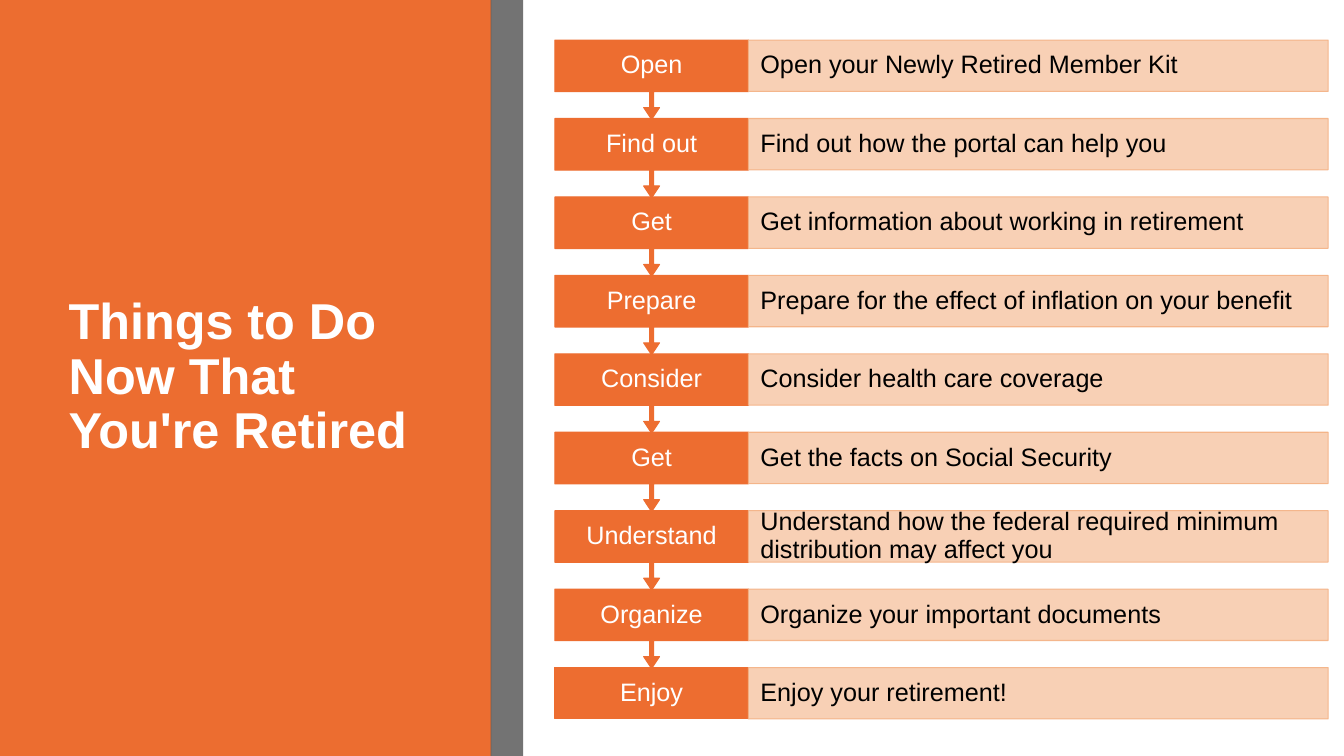
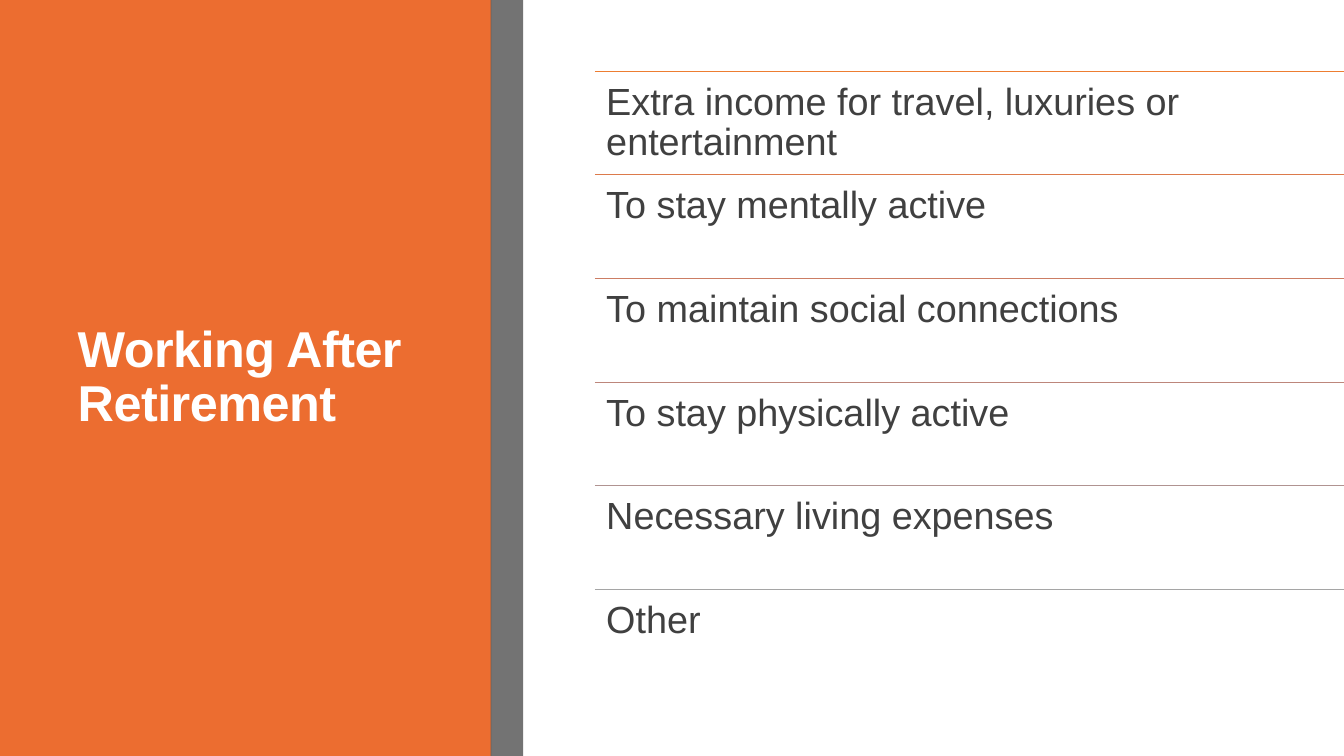
from pptx import Presentation
from pptx import util as u
from pptx.dml import color
from pptx.enum import shapes, text
from pptx.oxml import ns
from lxml import etree

W, H = 17.78, 10
FONT = "Arial"
WHITE, BLACK, BODY = "FFFFFF", "000000", "404040"
PANEL, STRIPE = "E94D03", "595959"
STEP, BAR, BAR_EDGE = "ED6D30", "F8CBAD", "F4B183"
PANEL_W, STRIPE_W = 6.5, 0.43

STEP_X, STEP_W, STEP_H = 7.34, 2.56, 0.68
STEP_TOP, STEP_PITCH, CALLOUT_H = 0.53, 1.0375, 1.05
BAR_X, BAR_W = STEP_X + STEP_W, 7.67
STEPS = [
    ("Open", "Open your Newly Retired Member Kit"),
    ("Find out", "Find out how the portal can help you"),
    ("Get", "Get information about working in retirement"),
    ("Prepare", "Prepare for the effect of inflation on your benefit"),
    ("Consider", "Consider health care coverage"),
    ("Get", "Get the facts on Social Security"),
    ("Understand", "Understand how the federal required minimum distribution may affect you"),
    ("Organize", "Organize your important documents"),
    ("Enjoy", "Enjoy your retirement!"),
]

REASON_X, REASON_TOP, REASON_H = 7.87, 0.94, 1.372
REASONS = [
    ("Extra income for travel, luxuries or entertainment", "ED7D31"),
    ("To stay mentally active", "DC7A4B"),
    ("To maintain social connections", "CC7D64"),
    ("To stay physically active", "BD867B"),
    ("Necessary living expenses", "B09391"),
    ("Other", "A5A5A5"),
]


def paint(fmt, hex_color, alpha=100):
    fmt.solid()
    fmt.fore_color.rgb = color.RGBColor.from_string(hex_color)
    if alpha < 100:
        clr = fmt._xPr.find(".//" + ns.qn("a:srgbClr"))
        etree.SubElement(clr, ns.qn("a:alpha")).set("val", str(alpha * 1000))


def inches(*lengths):
    return [u.Inches(n) for n in lengths]


def add_box(slide, kind, x, y, w, h, fill, edge=None, alpha=100):
    sp = slide.shapes.add_shape(kind, *inches(x, y, w, h))
    sp.shadow.inherit = False
    paint(sp.fill, fill, alpha)
    if edge:
        sp.line.width = u.Pt(1)
        paint(sp.line.fill, edge, alpha)
    else:
        sp.line.fill.background()
    return sp


def write(sp, words, size, hex_color, bold=False, align=text.PP_ALIGN.LEFT,
          anchor=text.MSO_ANCHOR.MIDDLE, inset=(0.1, 0.05), spacing=0):
    tf = sp.text_frame
    tf.word_wrap = True
    tf.vertical_anchor = anchor
    tf.margin_left = tf.margin_right = u.Inches(inset[0])
    tf.margin_top = tf.margin_bottom = u.Inches(inset[1])
    p = tf.paragraphs[0]
    p.alignment = align
    p.line_spacing = 0.9
    r = p.add_run()
    r.text = words
    r.font.name, r.font.size, r.font.bold = FONT, u.Pt(size), bold
    paint(r.font.fill, hex_color)
    if spacing:
        r._r.get_or_add_rPr().set("spc", str(int(spacing * 100)))


def add_text(slide, x, y, w, h, words, size, hex_color, **fmt):
    sp = slide.shapes.add_textbox(*inches(x, y, w, h))
    write(sp, words, size, hex_color, **fmt)


def add_rule(slide, x, y, hex_color):
    line = slide.shapes.add_connector(shapes.MSO_CONNECTOR.STRAIGHT, *inches(x, y, W, y))
    line.line.width = u.Pt(1)
    paint(line.line.fill, hex_color)
    etree.SubElement(line._element.spPr, ns.qn("a:effectLst"))


def add_titled_slide(prs, title, x, w, spacing=0):
    slide = prs.slides.add_slide(prs.slide_layouts[6])
    rect = shapes.MSO_SHAPE.RECTANGLE
    add_box(slide, rect, 0, 0, PANEL_W, H, PANEL, alpha=82)
    add_box(slide, rect, PANEL_W - 0.01, 0, STRIPE_W, H, STRIPE, alpha=84)
    add_text(slide, x, 0.79, w, H - 2 * 0.79, title, 48, WHITE, bold=True, spacing=spacing)
    return slide


def add_step(slide, row, verb, detail):
    y = STEP_TOP + row * STEP_PITCH
    if row == len(STEPS) - 1:
        add_box(slide, shapes.MSO_SHAPE.RECTANGLE, STEP_X, y, STEP_W, STEP_H, STEP, STEP)
    else:
        sp = add_box(slide, shapes.MSO_SHAPE.UP_ARROW_CALLOUT,
                     STEP_X, y, STEP_W, CALLOUT_H, STEP, STEP)
        sp.rotation = 180
        for i, share in enumerate((0.05, 0.1, 0.15, 0.65)):
            sp.adjustments[i] = share
    add_text(slide, STEP_X, y, STEP_W, STEP_H, verb, 24, WHITE,
             align=text.PP_ALIGN.CENTER, inset=(0.18, 0.19))
    bar = add_box(slide, shapes.MSO_SHAPE.RECTANGLE,
                  BAR_X, y, BAR_W, STEP_H, BAR, BAR_EDGE, alpha=90)
    write(bar, detail, 24, BLACK, inset=(0.16, 0.33))


def add_reason(slide, row, reason, rule_color):
    y = REASON_TOP + row * REASON_H
    add_rule(slide, REASON_X, y, rule_color)
    add_text(slide, REASON_X, y, W - REASON_X, REASON_H, reason, 36, BODY,
             anchor=text.MSO_ANCHOR.TOP, inset=(0.15, 0.15))


def main():
    prs = Presentation()
    prs.slide_width, prs.slide_height = inches(W, H)

    slide = add_titled_slide(prs, "Things to Do Now That You're Retired", 0.81, 4.7)
    for row, (verb, detail) in reversed(list(enumerate(STEPS))):
        add_step(slide, row, verb, detail)

    slide = add_titled_slide(prs, "Working After Retirement", 0.93, 4.5, spacing=-0.5)
    for row, (reason, rule_color) in enumerate(REASONS):
        add_reason(slide, row, reason, rule_color)

    prs.save("out.pptx")


if __name__ == "__main__":
    main()
